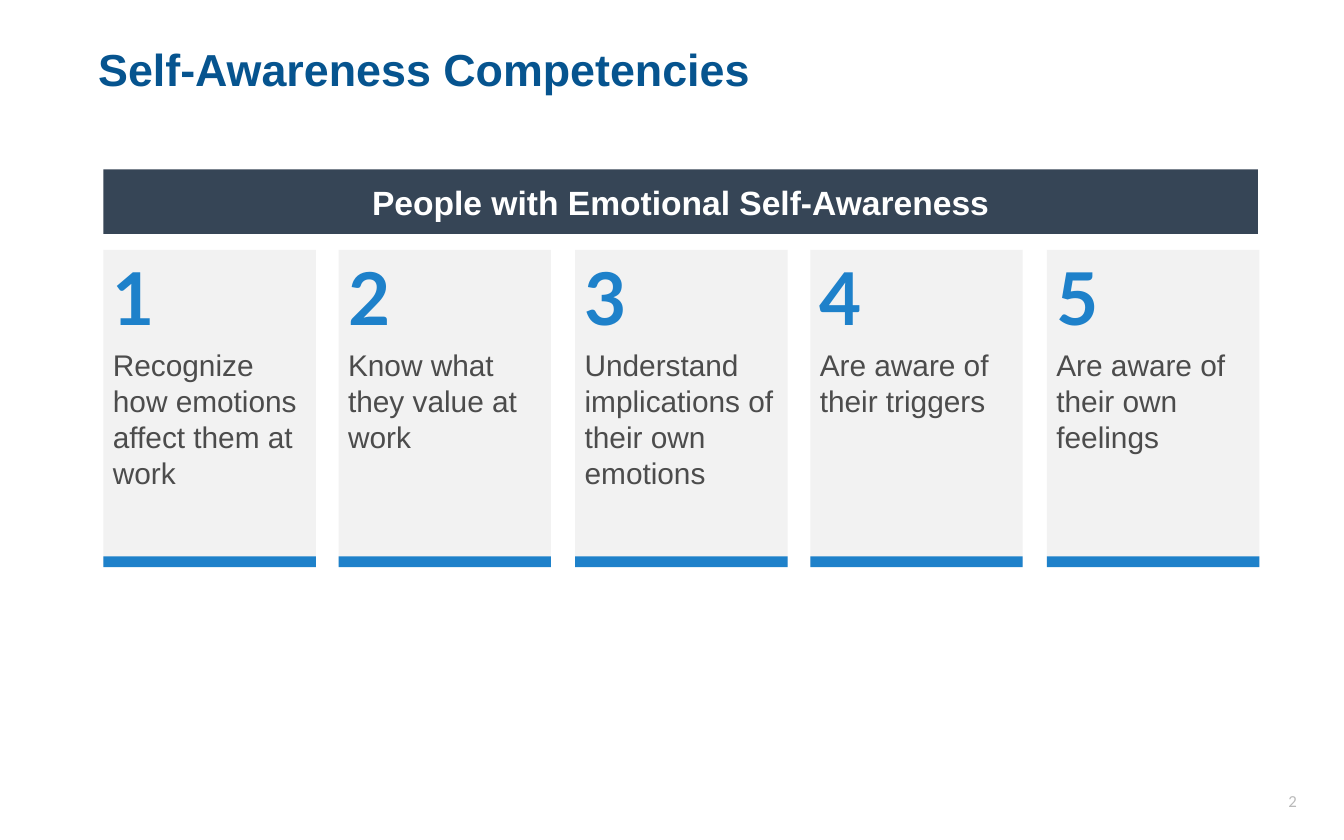
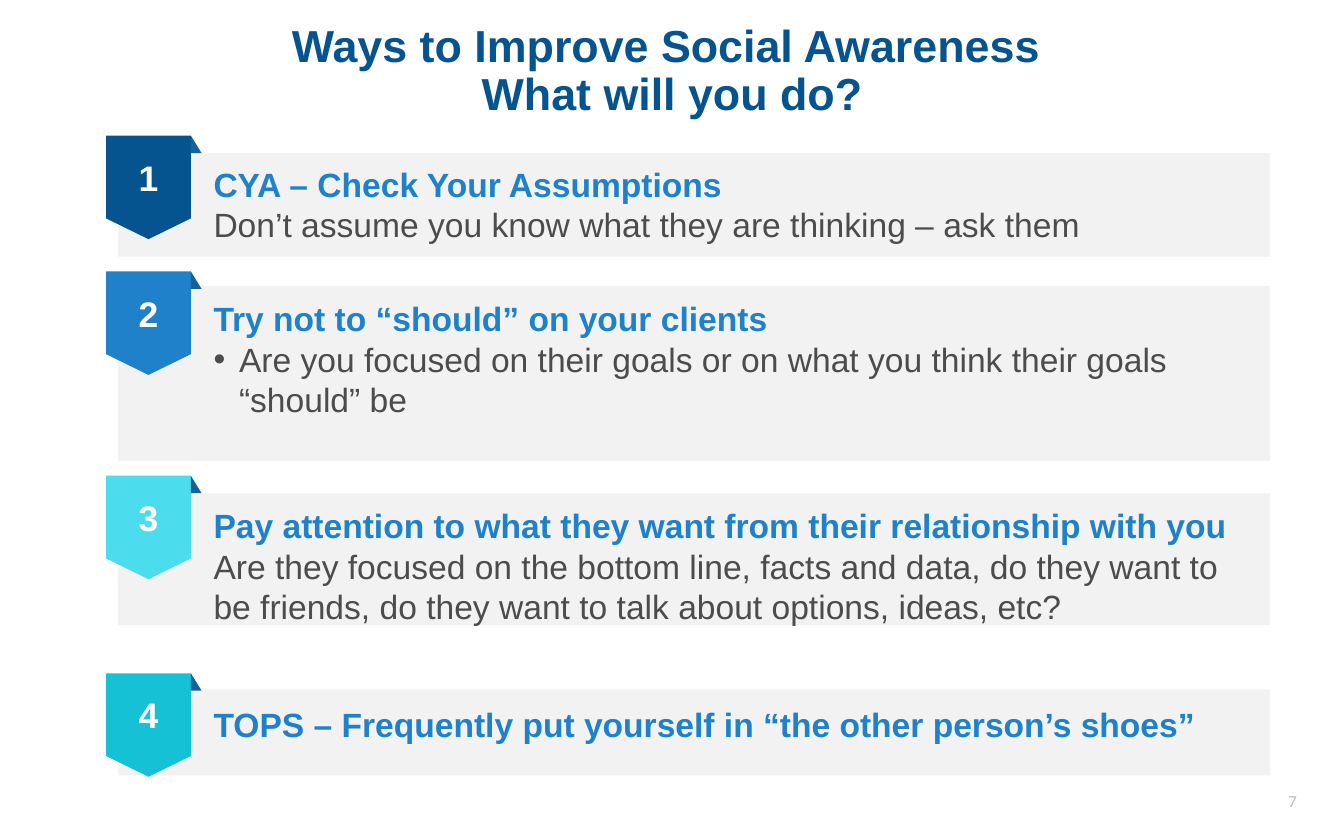
"""Build two slides on self-awareness and social awareness."""
from dataclasses import dataclass

from lxml.etree import SubElement
from pptx import Presentation
from pptx.dml.color import RGBColor
from pptx.enum.shapes import MSO_SHAPE as Shape
from pptx.enum.text import MSO_ANCHOR as Anchor, MSO_AUTO_SIZE as AutoSize, PP_ALIGN as Align
from pptx.oxml.ns import qn
from pptx.util import Pt

EMU_PER_PX = 9144
TIGHT, ROOMY = (4, 2), (10, 5)


@dataclass(frozen=True)
class Type:
    """Font, size, colour and weight of a run."""
    font: str
    size: int
    color: str
    bold: bool = False


@dataclass(frozen=True)
class Theme:
    """Colours and type styles that the slides share."""
    blue: str = "1E81CA"
    navy: str = "06548F"
    slate: str = "364556"
    panel: str = "F2F2F2"
    fold: str = "176198"
    aqua: str = "4BDCED"
    teal: str = "15C1D5"
    title: Type = Type("Arial", 24, "06548F", True)
    page: Type = Type("Calibri", 9, "BABABA")
    banner: Type = Type("Arial", 18, "FFFFFF", True)
    numeral: Type = Type("Lato", 39, "1E81CA", True)
    card: Type = Type("Arial", 16, "4C4C4C")
    badge: Type = Type("Arial", 19, "FFFFFF", True)
    heading: Type = Type("Arial", 18, "1E81CA", True)
    detail: Type = Type("Arial", 18, "4C4C4C")


@dataclass(frozen=True)
class Tip:
    """One numbered way to improve, with its vertical layout."""
    color: str
    badge_top: int
    panel_top: int
    panel_height: int
    text_top: int
    text_width: int
    lines: int
    heading: str
    detail: str = ""
    bulleted: bool = False


THEME = Theme()

COMPETENCIES = [
    ("Recognize how emotions affect them at work", 4),
    ("Know what they value at work", 3),
    ("Understand implications of their own emotions", 4),
    ("Are aware of their triggers", 2),
    ("Are aware of their own feelings", 3),
]

TIPS = [
    Tip(THEME.navy, 101, 114, 77, 117, 698, 2, "CYA – Check Your Assumptions",
        "Don’t assume you know what they are thinking – ask them"),
    Tip(THEME.blue, 202, 213, 130, 217, 795, 3, "Try not to “should” on your clients",
        "Are you focused on their goals or on what you think their goals “should” be", True),
    Tip(THEME.aqua, 354, 367, 98, 371, 795, 3,
        "Pay attention to what they want from their relationship with you",
        "Are they focused on the bottom line, facts and data, do they want to be friends, "
        "do they want to talk about options, ideas, etc?"),
    Tip(THEME.teal, 501, 513, 64, 519, 795, 1,
        "TOPS – Frequently put yourself in “the other person’s shoes”"),
]


def px(*lengths):
    """Turn pixel lengths into EMU."""
    return [length * EMU_PER_PX for length in lengths]


def add_block(shapes, kind, box, color):
    """Add a flat filled shape without outline or shadow."""
    block = shapes.add_shape(kind, *px(*box))
    block.shadow.inherit = False
    block.fill.solid()
    block.fill.fore_color.rgb = RGBColor.from_string(color)
    block.line.fill.background()
    return block


def set_frame(holder, insets, anchor=Anchor.MIDDLE, wrap=True, grow=False):
    """Set up a text frame and return it."""
    frame = holder.text_frame
    across, down = px(*insets)
    frame.margin_left = frame.margin_right = across
    frame.margin_top = frame.margin_bottom = down
    frame.vertical_anchor = anchor
    frame.word_wrap = wrap
    frame.auto_size = AutoSize.SHAPE_TO_FIT_TEXT if grow else AutoSize.NONE
    return frame


def add_run(paragraph, text, style):
    """Append one styled run."""
    run = paragraph.add_run()
    run.text = text
    run.font.name = style.font
    run.font.size = Pt(style.size)
    run.font.bold = style.bold
    run.font.color.rgb = RGBColor.from_string(style.color)


def write_line(frame, text, style, align=Align.LEFT):
    """Fill the first paragraph of a frame with one run."""
    paragraph = frame.paragraphs[0]
    paragraph.alignment = align
    add_run(paragraph, text, style)


def add_bullet(paragraph, indent):
    """Give a paragraph a hanging round bullet."""
    hang = px(indent)[0]
    props = paragraph._p.get_or_add_pPr()
    props.set("marL", str(hang))
    props.set("indent", str(-hang))
    SubElement(props, qn("a:buFont")).set("typeface", "Arial")
    SubElement(props, qn("a:buChar")).set("char", "•")


def add_slide(deck, title_lines, align, page):
    """Add a blank slide with the shared title and page number."""
    slide = deck.slides.add_slide(deck.slide_layouts[6])
    title = set_frame(slide.shapes.add_textbox(*px(69, 16, 862, 75)), TIGHT).paragraphs[0]
    title.alignment = align
    title.line_spacing = 0.9
    for index, line in enumerate(title_lines):
        if index:
            title.add_line_break()
        add_run(title, line, THEME.title)
    footer = set_frame(slide.shapes.add_textbox(*px(744, 579, 225, 33)), TIGHT)
    write_line(footer, page, THEME.page, Align.RIGHT)
    return slide


def add_card(slide, left, number, text, lines):
    """Add a numbered competency card with a bottom bar."""
    shapes = slide.shapes.add_group_shape().shapes
    add_block(shapes, Shape.RECTANGLE, (left, 186, 158, 235), THEME.panel)
    numeral = shapes.add_textbox(*px(left + 3, 186, 38, 70))
    write_line(set_frame(numeral, TIGHT, Anchor.TOP, wrap=False, grow=True),
               str(number), THEME.numeral, Align.CENTER)
    body = shapes.add_textbox(*px(left + 3, 256, 155, 4 + 27 * lines))
    write_line(set_frame(body, TIGHT, Anchor.TOP, grow=True), text, THEME.card)
    add_block(shapes, Shape.RECTANGLE, (left, 414, 158, 8), THEME.blue)


def add_tip(slide, number, tip):
    """Add a panel with a folded number badge and its text."""
    shapes = slide.shapes.add_group_shape().shapes
    add_block(shapes, Shape.RECTANGLE, (88, tip.panel_top, 857, tip.panel_height), THEME.panel)
    badge = add_block(shapes, Shape.FLOWCHART_OFFPAGE_CONNECTOR,
                      (79, tip.badge_top, 63, 77), tip.color)
    write_line(set_frame(badge, TIGHT), str(number), THEME.badge, Align.CENTER)
    add_block(shapes, Shape.RIGHT_TRIANGLE, (142, tip.badge_top, 8, 13), THEME.fold)
    message = shapes.add_textbox(*px(149, tip.text_top, tip.text_width, 10 + 30 * tip.lines))
    frame = set_frame(message, ROOMY, Anchor.TOP, grow=True)
    write_line(frame, tip.heading, THEME.heading)
    if tip.detail:
        detail = frame.add_paragraph()
        if tip.bulleted:
            add_bullet(detail, 19)
        add_run(detail, tip.detail, THEME.detail)


def build_competencies(deck):
    """Build the slide of five competency cards."""
    slide = add_slide(deck, ["Self-Awareness Competencies"], Align.LEFT, "2")
    banner = add_block(slide.shapes, Shape.RECTANGLE, (77, 126, 859, 48), THEME.slate)
    write_line(set_frame(banner, ROOMY), "People with Emotional Self-Awareness",
               THEME.banner, Align.CENTER)
    last_offset = 860 - 158
    for index, (text, lines) in enumerate(COMPETENCIES):
        left = 77 + index * last_offset // (len(COMPETENCIES) - 1)
        add_card(slide, left, index + 1, text, lines)


def build_tips(deck):
    """Build the slide of four ways to improve."""
    slide = add_slide(deck, ["Ways to Improve Social Awareness ", "What will you do?"],
                      Align.CENTER, "7")
    for number, tip in enumerate(TIPS, 1):
        add_tip(slide, number, tip)


def main():
    """Build and save the deck."""
    deck = Presentation()
    deck.slide_width, deck.slide_height = px(1000, 625)
    build_competencies(deck)
    build_tips(deck)
    deck.save("out.pptx")


if __name__ == "__main__":
    main()
